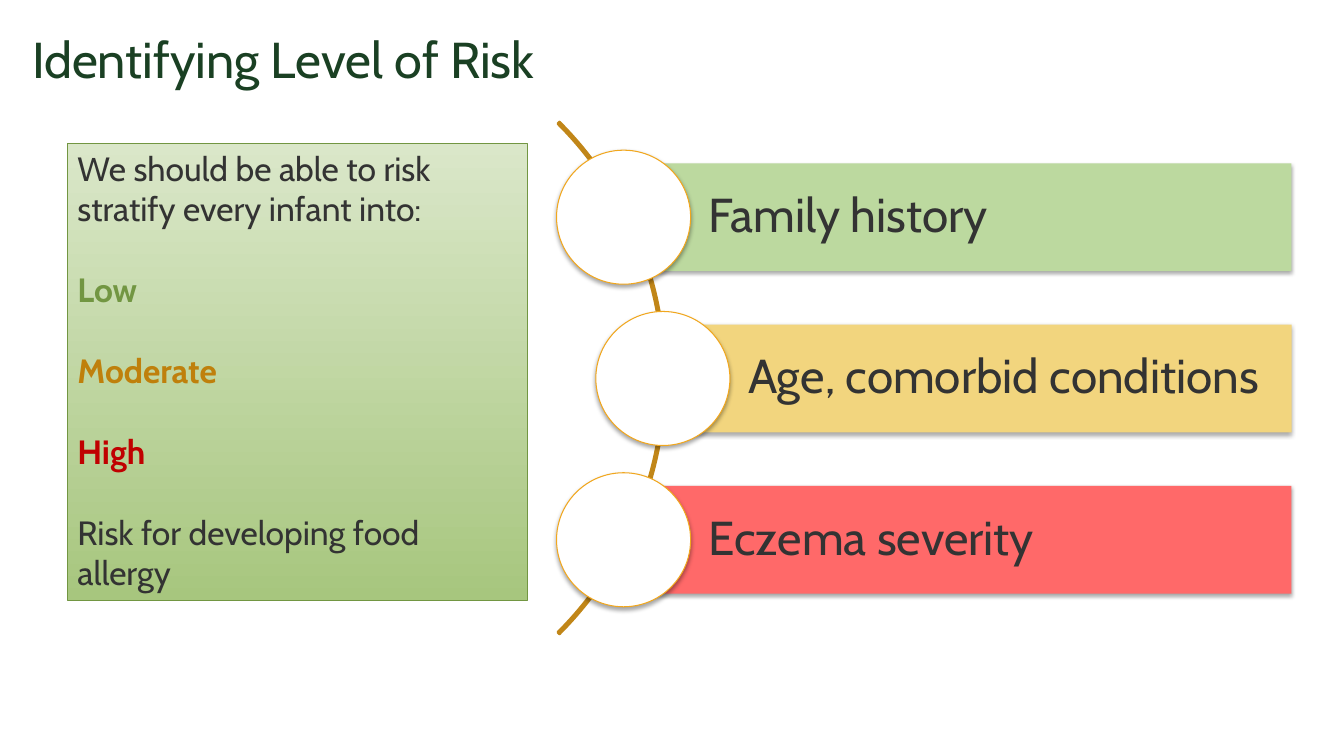
from pptx import Presentation
from pptx.dml.color import RGBColor
from pptx.enum.shapes import MSO_SHAPE
from pptx.enum.text import MSO_ANCHOR, PP_ALIGN
from pptx.oxml import parse_xml
from pptx.oxml.ns import nsdecls
from pptx.util import Pt

PX = 9144  # 100 px to the inch
FONT = "Cabin"
HEX = {
    "title": "1A4023", "text": "333333", "white": "FFFFFF",
    "low": "729642", "mid": "BF800C", "high": "C00000",
    "light": "DAE7C9", "deep": "A7C67E", "arc": "C18618", "ring": "F1A71E",
    "green": "BCD99F", "gold": "F2D57E", "red": "FF6969", "shade": "000000",
}
LEVELS = [
    ("We should be able to risk stratify every infant into:", "text", False),
    ("Low", "low", True),
    ("Moderate", "mid", True),
    ("High", "high", True),
    ("Risk for developing food allergy", "text", False),
]
FACTORS = [
    ("Family history", "green", 618),
    ("Age, comorbid conditions", "gold", 657),
    ("Eczema severity", "red", 618),
]


def color(name):
    return RGBColor.from_string(HEX[name])


def emu(*sizes):
    return [size * PX for size in sizes]


def add_run(para, text, size, tint, bold=False):
    para.alignment = PP_ALIGN.LEFT
    run = para.add_run()
    run.text = text
    font = run.font
    font.name, font.size, font.bold = FONT, Pt(size), bold
    font.color.rgb = color(tint)


def set_frame(frame, anchor, insets):
    """Wrap the text and set its insets: left, top, right, bottom."""
    frame.word_wrap = True
    frame.vertical_anchor = anchor
    (frame.margin_left, frame.margin_top,
     frame.margin_right, frame.margin_bottom) = emu(*insets)


def add_shape(slide, kind, box, fill=None, line=None, width=0.75):
    shape = slide.shapes.add_shape(kind, *emu(*box))
    shape.shadow.inherit = False
    if fill:
        shape.fill.solid()
        shape.fill.fore_color.rgb = color(fill)
    else:
        shape.fill.background()
    if line:
        shape.line.color.rgb = color(line)
        shape.line.width = Pt(width)
    else:
        shape.line.fill.background()
    return shape


def cast_shadow(shape):
    effects = shape.element.spPr.find(
        "{http://schemas.openxmlformats.org/drawingml/2006/main}effectLst")
    effects.append(parse_xml(
        f'<a:outerShdw {nsdecls("a")} blurRad="40000" dist="23000" '
        f'dir="5400000" rotWithShape="0"><a:srgbClr val="{HEX["shade"]}">'
        '<a:alpha val="35000"/></a:srgbClr></a:outerShdw>'))


def add_title(slide, box):
    frame = slide.shapes.add_textbox(*emu(*box)).text_frame
    set_frame(frame, MSO_ANCHOR.MIDDLE, (10, 5, 10, 5))
    para = frame.paragraphs[0]
    para.line_spacing = 0.9
    add_run(para, "Identifying Level of Risk", 36, "title")


def add_panel(slide, box):
    panel = add_shape(slide, MSO_SHAPE.RECTANGLE, box, line="low")
    panel.fill.gradient()
    panel.fill.gradient_angle = 270
    for stop, tint in zip(panel.fill.gradient_stops, ("light", "deep")):
        stop.color.rgb = color(tint)
    frame = panel.text_frame
    set_frame(frame, MSO_ANCHOR.TOP, (10, 5, 10, 5))
    for i, (text, tint, bold) in enumerate(LEVELS):
        para = frame.add_paragraph() if i else frame.paragraphs[0]
        if i:
            para.space_before = Pt(29)
        add_run(para, text, 24, tint, bold)


def add_factor(slide, box, text, fill, dot=133):
    """Draw a bar with a circle centred on its left end."""
    left, top, _, height = box
    bar = add_shape(slide, MSO_SHAPE.RECTANGLE, box, fill)
    cast_shadow(bar)
    set_frame(bar.text_frame, MSO_ANCHOR.MIDDLE, (85, 9, 9, 9))
    para = bar.text_frame.paragraphs[0]
    para.line_spacing = 0.9
    add_run(para, text, 34, "text")
    place = (left - dot // 2, top + (height - dot) // 2, dot, dot)
    cast_shadow(add_shape(slide, MSO_SHAPE.OVAL, place, "white", "ring"))


def add_factors(slide, box):
    """Stack the bars against the right edge of the box, over an arc."""
    left, top, width, height = box
    arc = add_shape(slide, MSO_SHAPE.BLOCK_ARC, (left - 610, top - 146, 718, 718),
                    line="arc", width=2)
    for i, value in enumerate((189, 27, 0.003)):
        arc.adjustments[i] = value
    bar = 107
    pitch = (height - bar) // (len(FACTORS) - 1)
    for i, (text, fill, start) in enumerate(FACTORS):
        place = (start, top + i * pitch, left + width - start, bar)
        add_factor(slide, place, text, fill)


def main():
    deck = Presentation()
    deck.slide_width, deck.slide_height = emu(1333, 750)
    slide = deck.slides.add_slide(deck.slide_layouts[6])
    add_factors(slide, (552, 162, 729, 427))
    add_panel(slide, (67, 142, 456, 454))
    add_title(slide, (22, 29, 783, 65))
    deck.save("out.pptx")


if __name__ == "__main__":
    main()
